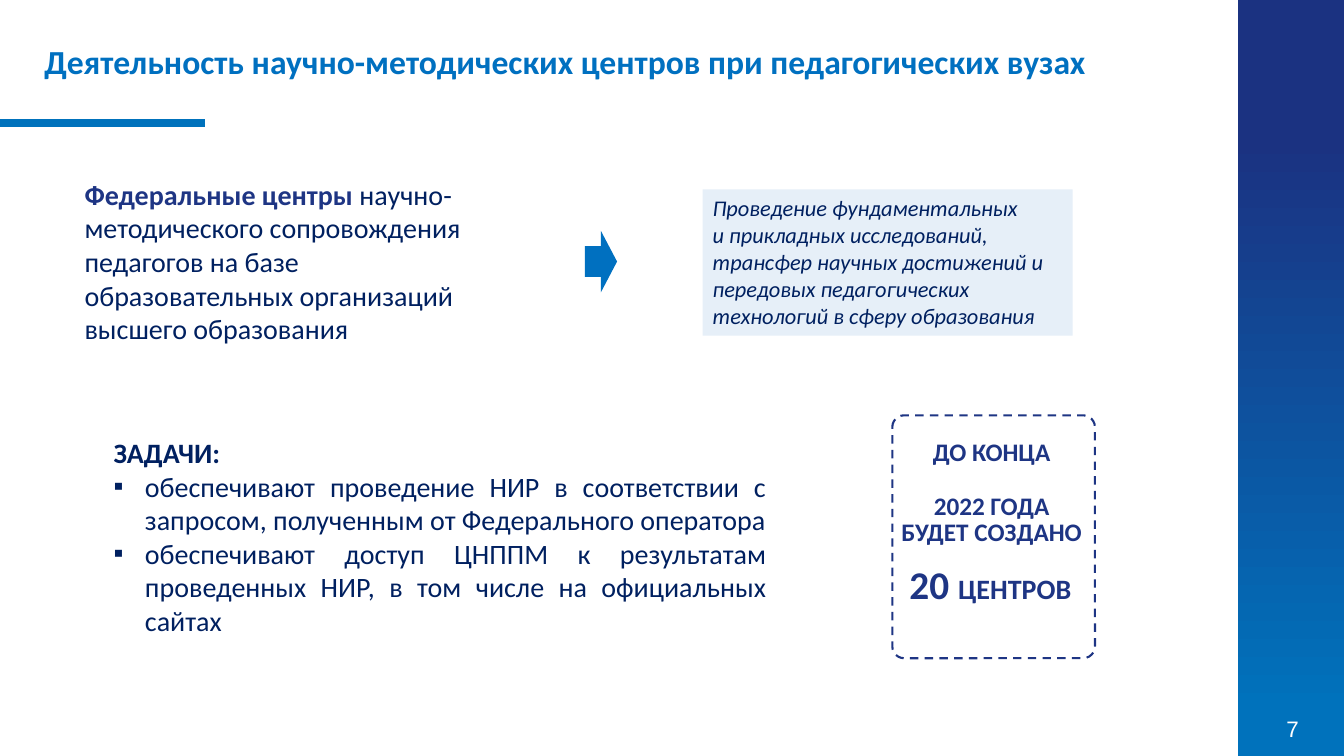
from lxml.etree import SubElement
from pptx import Presentation
from pptx.dml.color import RGBColor
from pptx.enum.dml import MSO_LINE
from pptx.enum.shapes import MSO_CONNECTOR, MSO_SHAPE
from pptx.enum.text import MSO_ANCHOR, MSO_AUTO_SIZE, PP_ALIGN
from pptx.oxml.ns import qn
from pptx.util import Inches, Pt

WHITE = RGBColor(0xFF, 0xFF, 0xFF)
BLUE = RGBColor(0x00, 0x70, 0xC0)
BAND_BLUE = RGBColor(0x00, 0x72, 0xBC)
BAND_INDIGO = RGBColor(0x1B, 0x32, 0x81)
INDIGO = RGBColor(0x1E, 0x35, 0x84)
NAVY = RGBColor(0x00, 0x20, 0x60)
PALE_BLUE = RGBColor(0xBE, 0xD6, 0xEE)


def add_text(paragraph, text, font="Calibri", size=20, color=NAVY, bold=False, italic=False):
    run = paragraph.add_run()
    run.text = text
    run.font.name = font
    run.font.size = Pt(size)
    run.font.color.rgb = color
    run.font.bold = bold
    run.font.italic = italic


def start_paragraph(frame, align=PP_ALIGN.LEFT, bullet=None, line=None, before=0):
    first = frame.paragraphs[0]
    paragraph = frame.add_paragraph() if first.runs else first
    paragraph.alignment = align
    paragraph.space_before = Pt(before)
    if line:
        paragraph.line_spacing = Pt(line)
    if bullet:
        properties = paragraph._p.get_or_add_pPr()
        properties.set("marL", str(Inches(0.31)))
        properties.set("indent", str(Inches(-0.31)))
        SubElement(properties, qn("a:buFont")).set("typeface", "Arial")
        SubElement(properties, qn("a:buChar")).set("char", bullet)
    return paragraph


class SlideBuilder:
    def __init__(self, presentation):
        self.slide = presentation.slides.add_slide(presentation.slide_layouts[5])

    def title(self, text, left, top, width, height):
        title = self.slide.shapes.title
        title.left, title.top = Inches(left), Inches(top)
        title.width, title.height = Inches(width), Inches(height)
        frame = title.text_frame
        frame.word_wrap = False
        frame.auto_size = MSO_AUTO_SIZE.NONE
        frame.vertical_anchor = MSO_ANCHOR.TOP
        add_text(start_paragraph(frame), text, size=24, color=BLUE, bold=True)

    def text_box(self, left, top, width, height, anchor=MSO_ANCHOR.TOP):
        box = self.slide.shapes.add_textbox(
            Inches(left), Inches(top), Inches(width), Inches(height))
        box.text_frame.word_wrap = True
        box.text_frame.vertical_anchor = anchor
        return box.text_frame

    def shape(self, kind, left, top, width, height, fill=None, alpha=None):
        shape = self.slide.shapes.add_shape(
            kind, Inches(left), Inches(top), Inches(width), Inches(height))
        shape.shadow.inherit = False
        shape.line.fill.background()
        if fill is None:
            shape.fill.background()
        else:
            shape.fill.solid()
            shape.fill.fore_color.rgb = fill
        if alpha:
            color = shape.fill._xPr.find(".//" + qn("a:srgbClr"))
            SubElement(color, qn("a:alpha")).set("val", str(alpha * 1000))
        return shape

    def gradient_band(self, left, top, width, height, stops):
        fill = self.shape(MSO_SHAPE.RECTANGLE, left, top, width, height).fill
        fill.gradient()
        fill.gradient_angle = 90
        for stop, (position, color) in zip(fill.gradient_stops, stops):
            stop.position = position
            stop.color.rgb = color

    def rule(self, left, top, width, color, weight):
        line = self.slide.shapes.add_connector(
            MSO_CONNECTOR.STRAIGHT, Inches(left), Inches(top), Inches(left + width), Inches(top))
        line.line.color.rgb = color
        line.line.width = Pt(weight)
        SubElement(line._element.spPr, qn("a:effectLst"))


def main():
    presentation = Presentation()
    presentation.slide_width, presentation.slide_height = Inches(13.33), Inches(7.5)
    builder = SlideBuilder(presentation)

    builder.gradient_band(12.28, 0, 1.05, 7.5, [(0.06, BAND_BLUE), (0.82, BAND_INDIGO)])
    page_number = builder.text_box(12.42, 7.02, 0.8, 0.41, MSO_ANCHOR.MIDDLE)
    add_text(start_paragraph(page_number, PP_ALIGN.CENTER), "7", font="Arial", size=16, color=WHITE)
    builder.rule(0, 1.22, 2.03, BAND_BLUE, 6)
    builder.title("Деятельность научно-методических центров при педагогических вузах",
                  0.34, 0.36, 10.63, 0.5)

    centers = start_paragraph(builder.text_box(0.74, 1.71, 4.22, 1.78))
    add_text(centers, "Федеральные центры ", color=INDIGO, bold=True)
    add_text(centers, "научно-методического сопровождения педагогов на базе "
                      "образовательных организаций высшего образования")
    builder.shape(MSO_SHAPE.RIGHT_ARROW, 5.8, 2.29, 0.32, 0.61, BLUE)

    research = builder.shape(MSO_SHAPE.RECTANGLE, 6.97, 1.88, 3.67, 1.45, PALE_BLUE, 38).text_frame
    research.word_wrap = True
    research.vertical_anchor = MSO_ANCHOR.TOP
    for text in ("Проведение фундаментальных",
                 "и прикладных исследований, трансфер научных достижений и передовых "
                 "педагогических технологий в сферу образования"):
        add_text(start_paragraph(research), text, size=16, italic=True)

    tasks = builder.text_box(1.03, 4.27, 6.67, 2.12)
    add_text(start_paragraph(tasks, PP_ALIGN.JUSTIFY), "ЗАДАЧИ:", bold=True)
    for task in ("обеспечивают проведение НИР в соответствии с запросом, "
                 "полученным от Федерального оператора",
                 "обеспечивают доступ ЦНППМ к результатам проведенных НИР, "
                 "в том числе на официальных сайтах"):
        add_text(start_paragraph(tasks, PP_ALIGN.JUSTIFY, bullet="▪"), task)

    frame = builder.shape(MSO_SHAPE.ROUNDED_RECTANGLE, 8.85, 4.12, 2.01, 2.41)
    frame.adjustments[0] = 0.058
    frame.line.color.rgb = INDIGO
    frame.line.width = Pt(1.5)
    frame.line.dash_style = MSO_LINE.DASH

    deadline = builder.text_box(8.72, 4.32, 2.23, 1.17)
    for text, before in (("ДО КОНЦА", 0), ("2022 ГОДА", 19), ("БУДЕТ СОЗДАНО", 0)):
        add_text(start_paragraph(deadline, PP_ALIGN.CENTER, line=19, before=before),
                 text, size=18, color=INDIGO, bold=True)
    count = start_paragraph(builder.text_box(8.74, 5.71, 2.23, 0.37), PP_ALIGN.CENTER, line=19)
    for text, size in (("20 ", 28), ("ЦЕНТРОВ ", 20)):
        add_text(count, text, size=size, color=INDIGO, bold=True)

    presentation.save("out.pptx")


if __name__ == "__main__":
    main()
